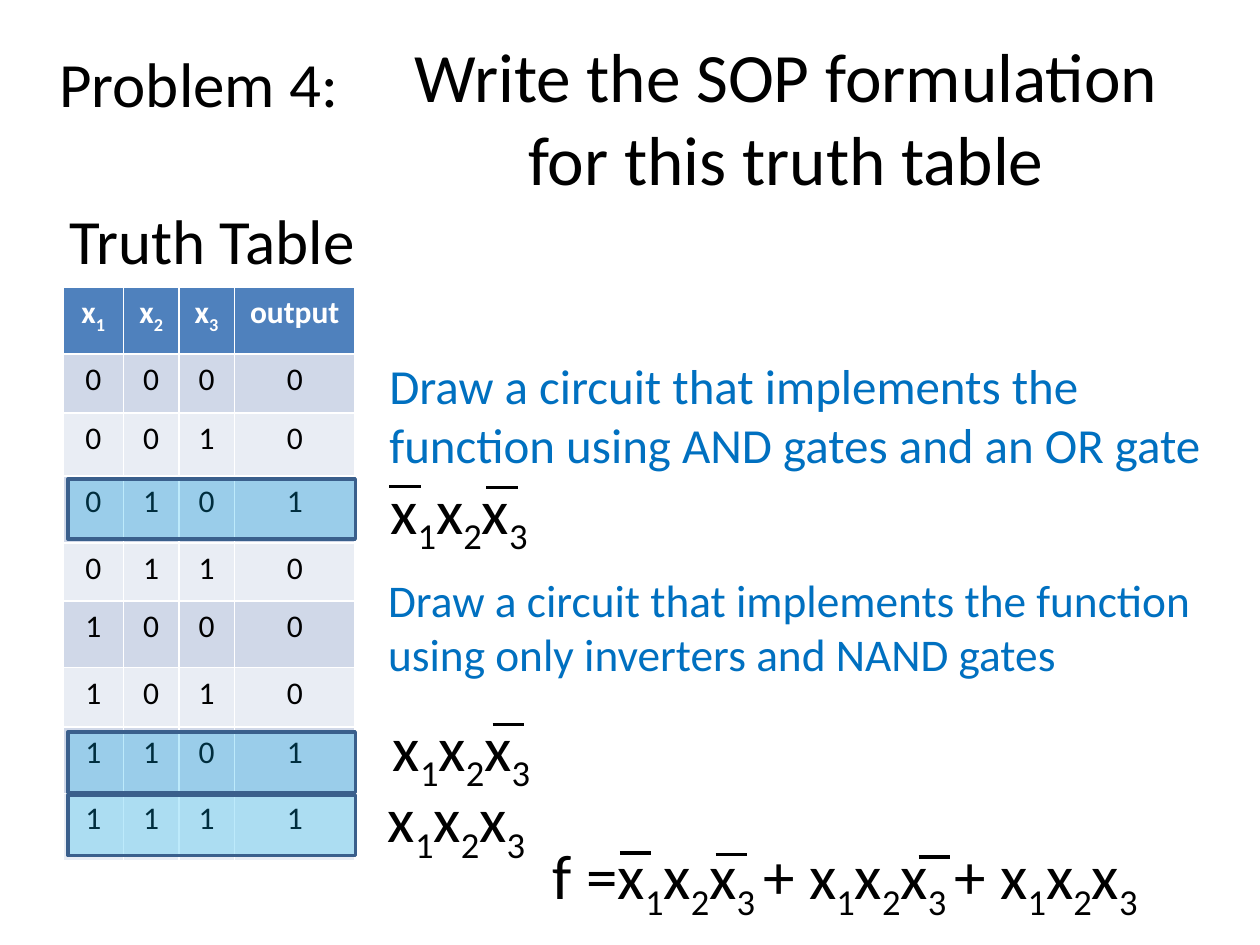
from lxml.etree import SubElement
from pptx import Presentation
from pptx.dml.color import RGBColor
from pptx.enum.shapes import MSO_CONNECTOR, MSO_SHAPE
from pptx.enum.text import MSO_ANCHOR, MSO_AUTO_SIZE, PP_ALIGN
from pptx.oxml.ns import qn
from pptx.util import Inches, Pt

BLACK = RGBColor(0x00, 0x00, 0x00)
WHITE = RGBColor(0xFF, 0xFF, 0xFF)
BLUE = RGBColor(0x00, 0x70, 0xC0)
HEAD = RGBColor(0x4F, 0x81, 0xBD)
BANDS = (RGBColor(0xE9, 0xED, 0xF4), RGBColor(0xD0, 0xD8, 0xE8))
GLOW = RGBColor(0x00, 0xB0, 0xF0)
EDGE = RGBColor(0x3A, 0x5F, 0x8C)

TERM = "x_1_x_2_x_3"
WIDTHS = (0.48, 0.44, 0.44, 0.96)
HEIGHTS = (0.53, 0.47, 0.5, 0.53, 0.46, 0.53, 0.47, 0.53, 0.53)
TRUE_ROWS = (2, 6, 7)


def place(shape, left, top, width, height):
    shape.left, shape.top = Inches(left), Inches(top)
    shape.width, shape.height = Inches(width), Inches(height)


def style(para, size, color, bold=False):
    font = para.font
    font.name, font.size, font.bold = "Calibri", Pt(size), bold
    font.color.rgb = color


def write(para, text):
    for i, part in enumerate(text.split("_")):
        run = para.add_run()
        run.text = part
        if i % 2:
            run._r.get_or_add_rPr().set("baseline", "-25000")


def fill_title(title, text):
    place(title, 2.98, 0.3, 6.52, 1.25)
    frame = title.text_frame
    frame.text = text
    frame.auto_size = MSO_AUTO_SIZE.NONE
    frame.vertical_anchor = MSO_ANCHOR.MIDDLE
    para = frame.paragraphs[0]
    para.alignment = PP_ALIGN.CENTER
    style(para, 39.6, BLACK)


def fill_task(body, text, left, top, size):
    place(body, left, top, 6.85, 1.1)
    frame = body.text_frame
    frame.text = text
    frame.auto_size = MSO_AUTO_SIZE.NONE
    para = frame.paragraphs[0]
    style(para, size, BLUE)
    props = para._p.get_or_add_pPr()
    props.set("marL", "0")
    props.set("indent", "0")
    props.insert_element_before(props.makeelement(qn("a:buNone")), "a:tabLst", "a:defRPr")


def add_text(shapes, text, left, top, width):
    box = shapes.add_textbox(Inches(left), Inches(top), Inches(width), Inches(0.71))
    box.text_frame.word_wrap = True
    para = box.text_frame.paragraphs[0]
    style(para, 36, BLACK)
    write(para, text)


def add_bar(shapes, left, top):
    y = Inches(top)
    bar = shapes.add_connector(MSO_CONNECTOR.STRAIGHT, Inches(left), y, Inches(left + 0.25), y)
    bar.line.color.rgb = BLACK
    bar.line.width = Pt(2)
    SubElement(bar._element.spPr, qn("a:effectLst"))


def add_barred(slide, text, left, top, width, bars):
    group = slide.shapes.add_group_shape()
    add_text(group.shapes, text, left, top, width)
    for x, y in bars:
        add_bar(group.shapes, x, y)


def add_truth(slide):
    rows = [["x_1", "x_2", "x_3", "output"]]
    for n in range(8):
        rows.append(list(f"{n:03b}") + [str(int(n in TRUE_ROWS))])
    table = slide.shapes.add_table(
        len(rows), len(WIDTHS), Inches(0.5), Inches(2.28),
        Inches(sum(WIDTHS)), Inches(sum(HEIGHTS))).table
    for col, width in zip(table.columns, WIDTHS):
        col.width = Inches(width)
    for r, row in enumerate(rows):
        table.rows[r].height = Inches(HEIGHTS[r])
        for c, text in enumerate(row):
            cell = table.cell(r, c)
            cell.fill.solid()
            cell.fill.fore_color.rgb = BANDS[r % 2] if r else HEAD
            para = cell.text_frame.paragraphs[0]
            para.alignment = PP_ALIGN.CENTER
            style(para, 18, BLACK if r else WHITE, bold=r == 0)
            write(para, text)


def add_mark(slide, top):
    mark = slide.shapes.add_shape(
        MSO_SHAPE.RECTANGLE, Inches(0.54), Inches(top), Inches(2.28), Inches(0.48))
    mark.shadow.inherit = False
    mark.fill.solid()
    mark.fill.fore_color.rgb = GLOW
    tint = mark._element.spPr.find(qn("a:solidFill"))[0]
    SubElement(tint, qn("a:alpha"), val="26000")
    mark.line.color.rgb = EDGE
    mark.line.width = Pt(2)


def main():
    deck = Presentation()
    deck.slide_width, deck.slide_height = Inches(10), Inches(7.5)
    slide = deck.slides.add_slide(deck.slide_layouts[3])
    title, first, second = slide.placeholders
    fill_title(title, "Write the SOP formulation for this truth table")
    fill_task(first, "Draw a circuit that implements the function using "
              "AND gates and an OR gate", 2.99, 2.77, 28)
    fill_task(second, "Draw a circuit that implements the function using "
              "only inverters and NAND gates", 2.98, 4.49, 25.9)
    add_text(slide.shapes, " Problem 4:", 0.26, 0.3, 2.56)
    add_text(slide.shapes, " Truth Table", 0.34, 1.55, 2.63)
    add_truth(slide)
    for top in (3.8, 5.81, 6.31):
        add_mark(slide, top)
    add_barred(slide, TERM, 3, 3.69, 1.5, [(3.09, 3.86), (3.86, 3.87)])
    add_barred(slide, TERM, 3.02, 5.57, 1.5, [(3.91, 5.75)])
    add_text(slide.shapes, TERM, 2.98, 6.14, 1.5)
    add_barred(slide, "f =" + " _+ ".join([TERM] * 3), 4.29, 6.59, 5.16,
               [(4.92, 6.77), (5.68, 6.78), (7.29, 6.8)])
    deck.save("out.pptx")


if __name__ == "__main__":
    main()
